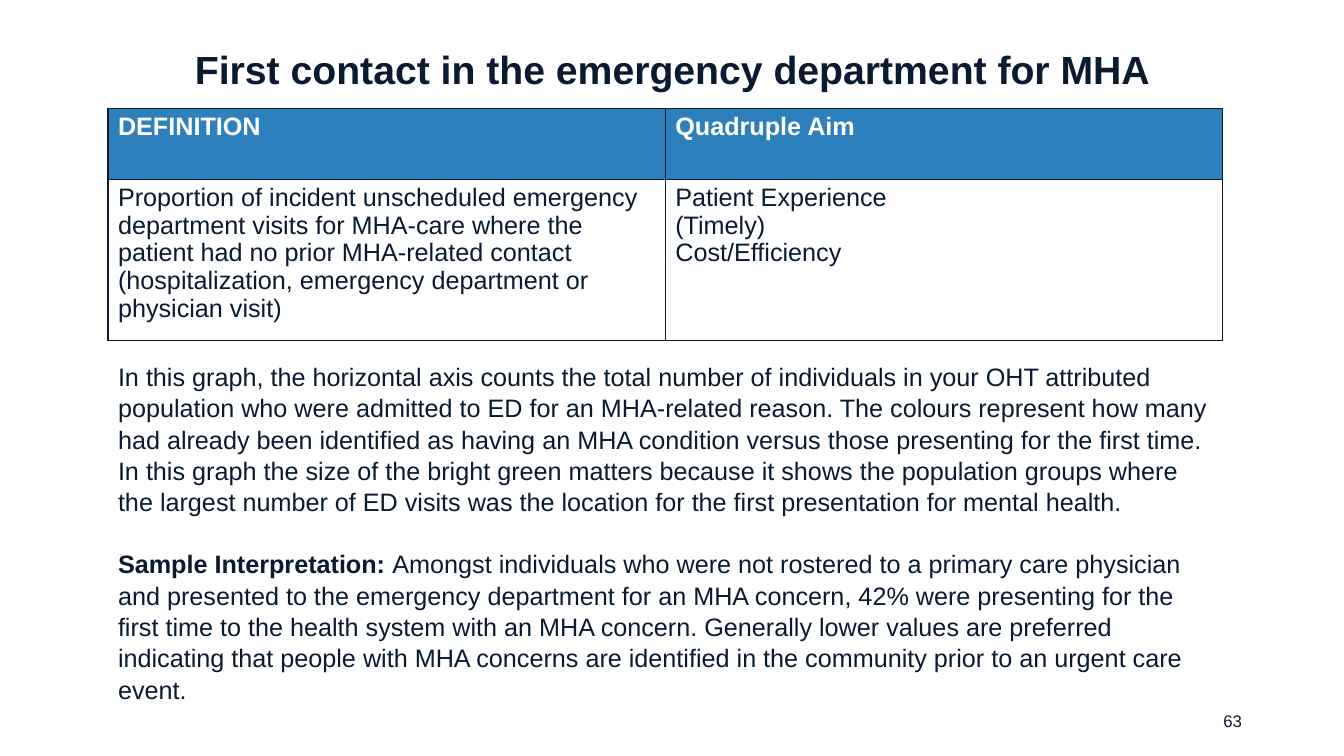
import pptx
import pptx.dml.color
import pptx.enum.text
import pptx.oxml
import pptx.oxml.ns
import pptx.util
from pptx.util import Cm

NAVY, BLUE, WHITE = "0A1A31", "2E80BC", "FFFFFF"
ALIGN = pptx.enum.text.PP_ALIGN
ANCHOR = pptx.enum.text.MSO_ANCHOR
LEFT, WIDTH = Cm(2.72), Cm(28.09)

HEADERS = ["DEFINITION", "Quadruple Aim"]
DETAILS = [
    "Proportion of incident unscheduled emergency department visits for MHA-care where the "
    "patient had no prior MHA-related contact (hospitalization, emergency department or "
    "physician visit)",
    "Patient Experience\n(Timely)\nCost/Efficiency",
]
GRAPH_READING = (
    "In this graph, the horizontal axis counts the total number of individuals in your OHT "
    "attributed population who were admitted to ED for an MHA-related reason. The colours "
    "represent how many had already been identified as having an MHA condition versus those "
    "presenting for the first time. In this graph the size of the bright green matters because "
    "it shows the population groups where the largest number of ED visits was the location for "
    "the first presentation for mental health."
)
INTERPRETATION = (
    "Amongst individuals who were not rostered to a primary care physician and presented to the "
    "emergency department for an MHA concern, 42% were presenting for the first time to the "
    "health system with an MHA concern. Generally lower values are preferred indicating that "
    "people with MHA concerns are identified in the community prior to an urgent care event."
)


def color(value):
    """Turn a hex string into a colour."""
    return pptx.dml.color.RGBColor.from_string(value)


def set_values(target, values):
    """Set each named attribute of the target."""
    for name, value in values.items():
        setattr(target, name, value)


def add_run(paragraph, text, size=18, bold=False, fill=NAVY):
    """Add a formatted run of text to a paragraph."""
    run = paragraph.add_run()
    run.text = text
    set_values(run.font, {"name": "Arial", "size": pptx.util.Pt(size), "bold": bold})
    run.font.color.rgb = color(fill)


def place(shape, left, top, width, height, anchor):
    """Position a text shape and return its first paragraph."""
    set_values(shape, {"left": left, "top": top, "width": width, "height": height})
    set_values(shape.text_frame, {
        "word_wrap": True,
        "auto_size": pptx.enum.text.MSO_AUTO_SIZE.NONE,
        "vertical_anchor": anchor,
    })
    return shape.text_frame.paragraphs[0]


def add_borders(cell):
    """Draw a thin navy line on every side of a cell."""
    properties = cell._tc.get_or_add_tcPr()
    for side in "LRTB":
        properties.append(pptx.oxml.parse_xml(
            f'<a:ln{side} {pptx.oxml.ns.nsdecls("a")} w="12700"><a:solidFill>'
            f'<a:srgbClr val="{NAVY}"/></a:solidFill></a:ln{side}>'))


def fill_cell(cell, text, background, **font):
    """Write the lines of a cell and set its borders and fill."""
    add_borders(cell)
    cell.fill.solid()
    cell.fill.fore_color.rgb = color(background)
    for index, line in enumerate(text.split("\n")):
        frame = cell.text_frame
        paragraph = frame.add_paragraph() if index else frame.paragraphs[0]
        paragraph.line_spacing = 0.98
        add_run(paragraph, line, **font)


def add_definition_table(slide):
    """Add the table with the definition and the aims."""
    table = slide.shapes.add_table(2, 2, LEFT, Cm(2.74), WIDTH, Cm(5.85)).table
    for row, height in zip(table.rows, (1.78, 4.07)):
        row.height = Cm(height)
    for column, (header, detail) in enumerate(zip(HEADERS, DETAILS)):
        fill_cell(table.cell(0, column), header, BLUE, bold=True, fill=WHITE)
        fill_cell(table.cell(1, column), detail, WHITE)


def format_body(paragraph, space_before):
    """Remove the bullet and indent of a body paragraph and set its spacing."""
    properties = paragraph._p.get_or_add_pPr()
    properties.set("marL", "0")
    properties.set("indent", "0")
    properties.append(pptx.oxml.parse_xml(f'<a:buNone {pptx.oxml.ns.nsdecls("a")}/>'))
    set_values(paragraph, {"line_spacing": 1.04, "space_before": pptx.util.Pt(space_before)})


def main():
    """Build the slide and save it."""
    presentation = pptx.Presentation()
    set_values(presentation, {"slide_width": Cm(33.87), "slide_height": Cm(19.05)})
    slide = presentation.slides.add_slide(presentation.slide_layouts[1])

    title = place(slide.shapes.title, Cm(1.96), Cm(0.74), Cm(29.97), Cm(2.13), ANCHOR.MIDDLE)
    set_values(title, {"alignment": ALIGN.CENTER, "line_spacing": 0.9})
    add_run(title, "First contact in the emergency department for MHA", 28, True)

    add_definition_table(slide)

    body = slide.placeholders[1]
    reading = place(body, LEFT, Cm(8.94), WIDTH, Cm(8.71), ANCHOR.TOP)
    format_body(reading, 0)
    add_run(reading, GRAPH_READING)
    interpretation = body.text_frame.add_paragraph()
    format_body(interpretation, 21.6)
    add_run(interpretation, "Sample Interpretation: ", bold=True)
    add_run(interpretation, INTERPRETATION)

    box = (Cm(23.93), Cm(17.65), Cm(7.62), Cm(1.02))
    number = place(slide.shapes.add_textbox(*box), *box, ANCHOR.MIDDLE)
    number.alignment = ALIGN.RIGHT
    add_run(number, "63", 12)

    presentation.save("out.pptx")


if __name__ == "__main__":
    main()
